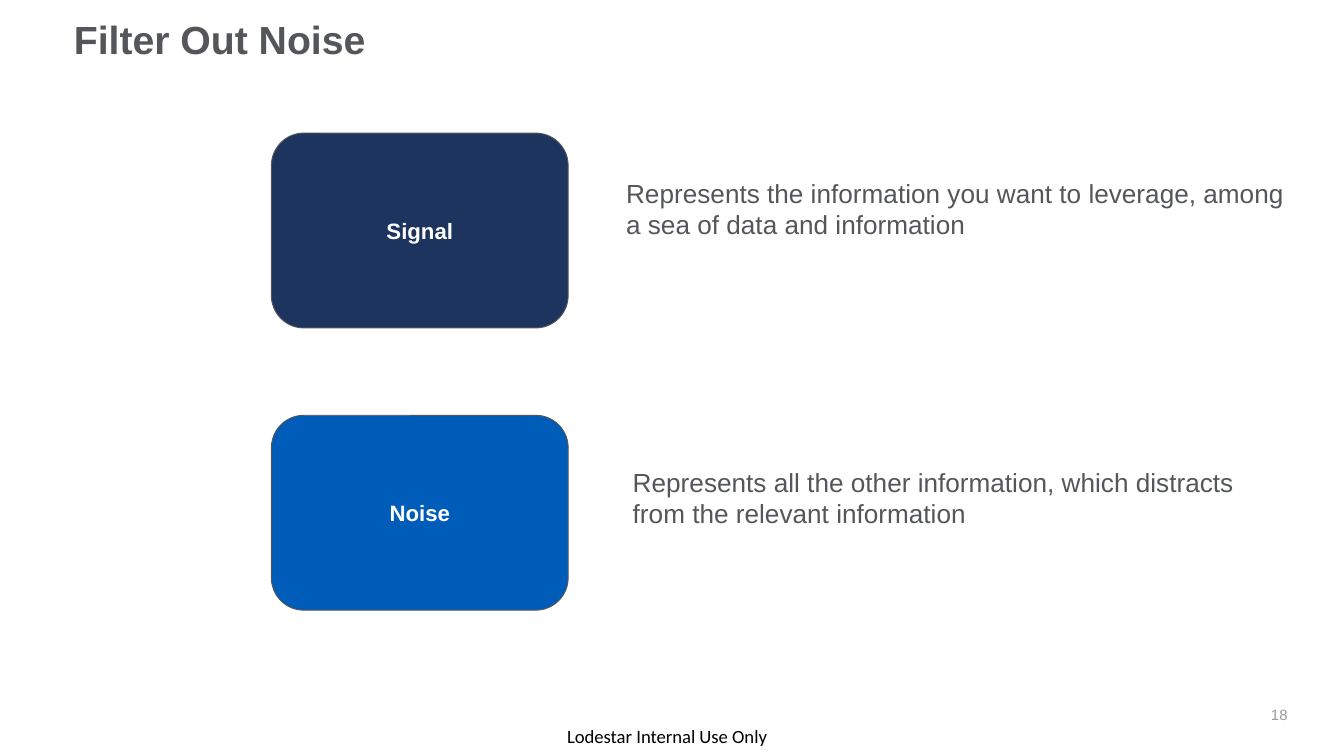
from pptx import Presentation
from pptx.dml.color import RGBColor
from pptx.enum.shapes import MSO_SHAPE
from pptx.enum.text import MSO_ANCHOR, PP_ALIGN
from pptx.util import Pt

ROUNDED = MSO_SHAPE.ROUNDED_RECTANGLE
MIDDLE = MSO_ANCHOR.MIDDLE
LEFT, CENTER, RIGHT = PP_ALIGN.LEFT, PP_ALIGN.CENTER, PP_ALIGN.RIGHT

NAVY = RGBColor(0x1C, 0x34, 0x5E)
BLUE = RGBColor(0x00, 0x5C, 0xB9)
SLATE = RGBColor(0x54, 0x56, 0x59)
GRAY = RGBColor(0x97, 0x99, 0x9D)
WHITE = RGBColor(0xFF, 0xFF, 0xFF)
BLACK = RGBColor(0x00, 0x00, 0x00)

CARD_WIDTH, CARD_HEIGHT = 159, 104.4
DEFAULT_INSETS = (7.2, 3.6, 7.2, 3.6)


def write(shape, text, size, color, bold=False, align=LEFT, font="Arial"):
    """Fill a shape with one paragraph of text."""
    para = shape.text_frame.paragraphs[0]
    para.text = text
    para.alignment = align
    para.font.name = font
    para.font.size = Pt(size)
    para.font.bold = bold
    para.font.color.rgb = color
    return para


def add_text(page, box, text, size, color, insets=DEFAULT_INSETS, **style):
    """Add a wrapping text box and return its paragraph."""
    text_box = page.shapes.add_textbox(*map(Pt, box))
    frame = text_box.text_frame
    frame.word_wrap = True
    (frame.margin_left, frame.margin_top,
     frame.margin_right, frame.margin_bottom) = map(Pt, insets)
    return write(text_box, text, size, color, **style)


def add_title(page, box, text):
    para = add_text(page, box, text, 21, SLATE, (0.7, 9.4, 0, 0), bold=True)
    para.line_spacing = 0.9
    para.space_before = Pt(4.6)


def add_definition(page, box, term, fill, meaning, meaning_box):
    """Place a term card and its meaning, offset from the card's corner."""
    left, top, width, height = box
    # Term card
    card = page.shapes.add_shape(ROUNDED, *map(Pt, box))
    card.shadow.inherit = False
    card.fill.solid()
    card.fill.fore_color.rgb = fill
    card.line.color.rgb = SLATE
    card.line.width = Pt(0.5)
    card.text_frame.vertical_anchor = MIDDLE
    write(card, term, 11.9, WHITE, bold=True, align=CENTER)
    # Meaning
    shift_x, shift_y, text_width, text_height = meaning_box
    add_text(page, (left + shift_x, top + shift_y, text_width, text_height),
             meaning, 14, SLATE)


def add_footer(page, box):
    left, top, width, height = box
    # Classification label
    add_text(page, (left + 303.8, top + 13.7, 114, 12.2),
             "Lodestar Internal Use Only", 10, BLACK, (0, 0, 0, 0), font="Calibri")
    # Page number
    add_text(page, (left + width - 43.9, top, 13.7, 18.7),
             "18", 8, GRAY, (0, 3.6, 0, 3.6), align=RIGHT)


def main():
    deck = Presentation()
    deck.slide_width, deck.slide_height = Pt(720), Pt(405)
    page = deck.slides.add_slide(deck.slide_layouts[6])

    add_title(page, (38.9, 1.4, 638.6, 32.4), "Filter Out Noise")

    definitions = [
        ("Signal", NAVY, "Represents the information you want to leverage, "
         "among a sea of data and information", (182.9, 20.2, 375.1, 41)),
        ("Noise", BLUE, "Represents all the other information, "
         "which distracts from the relevant information", (186.5, 23.8, 345.6, 41)),
    ]
    for row, definition in enumerate(definitions):
        box = (145.4, 71.3 + row * 151.2, CARD_WIDTH, CARD_HEIGHT)
        add_definition(page, box, *definition)

    add_footer(page, (0, 374.4, 720, 30.6))
    deck.save("out.pptx")


if __name__ == "__main__":
    main()
